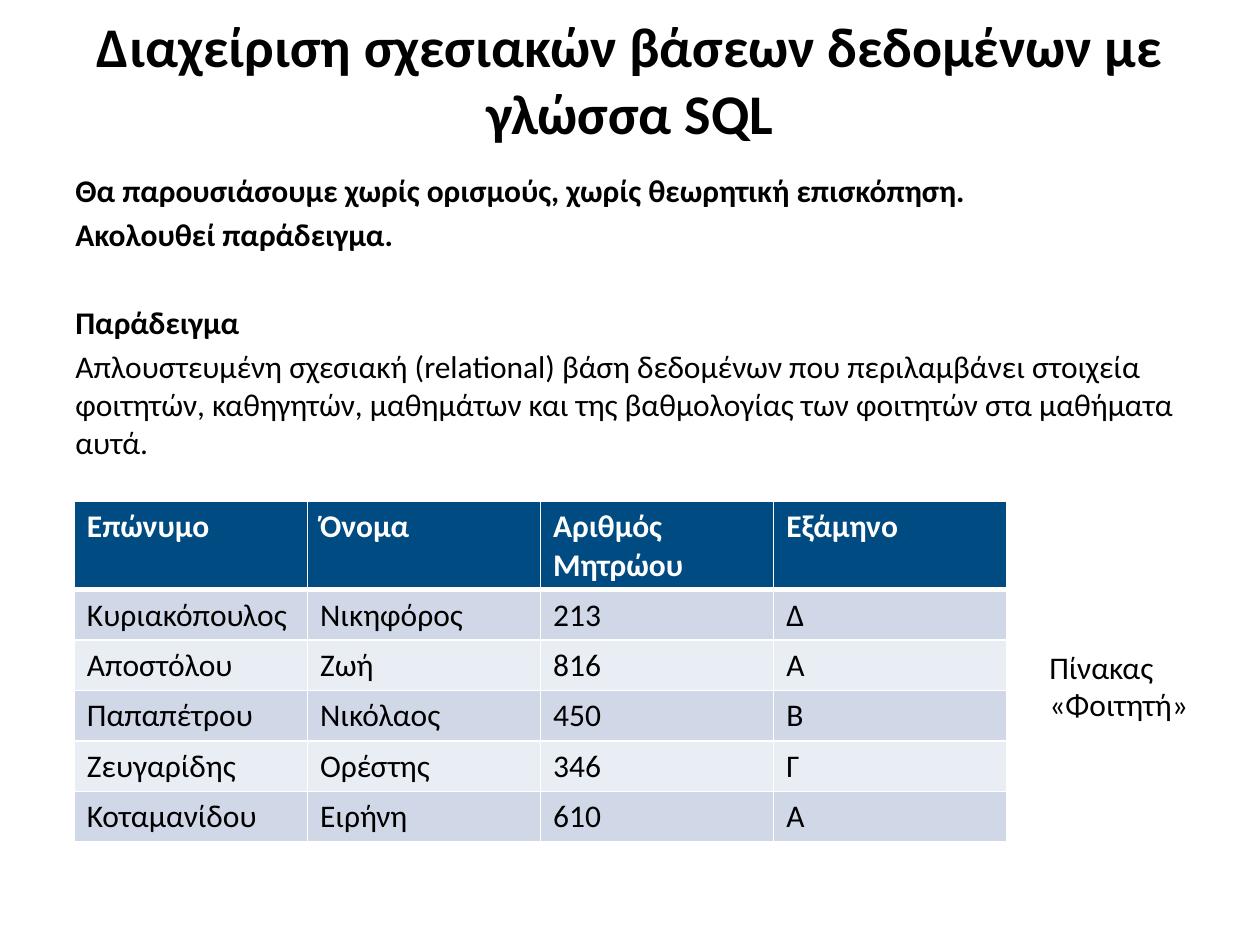
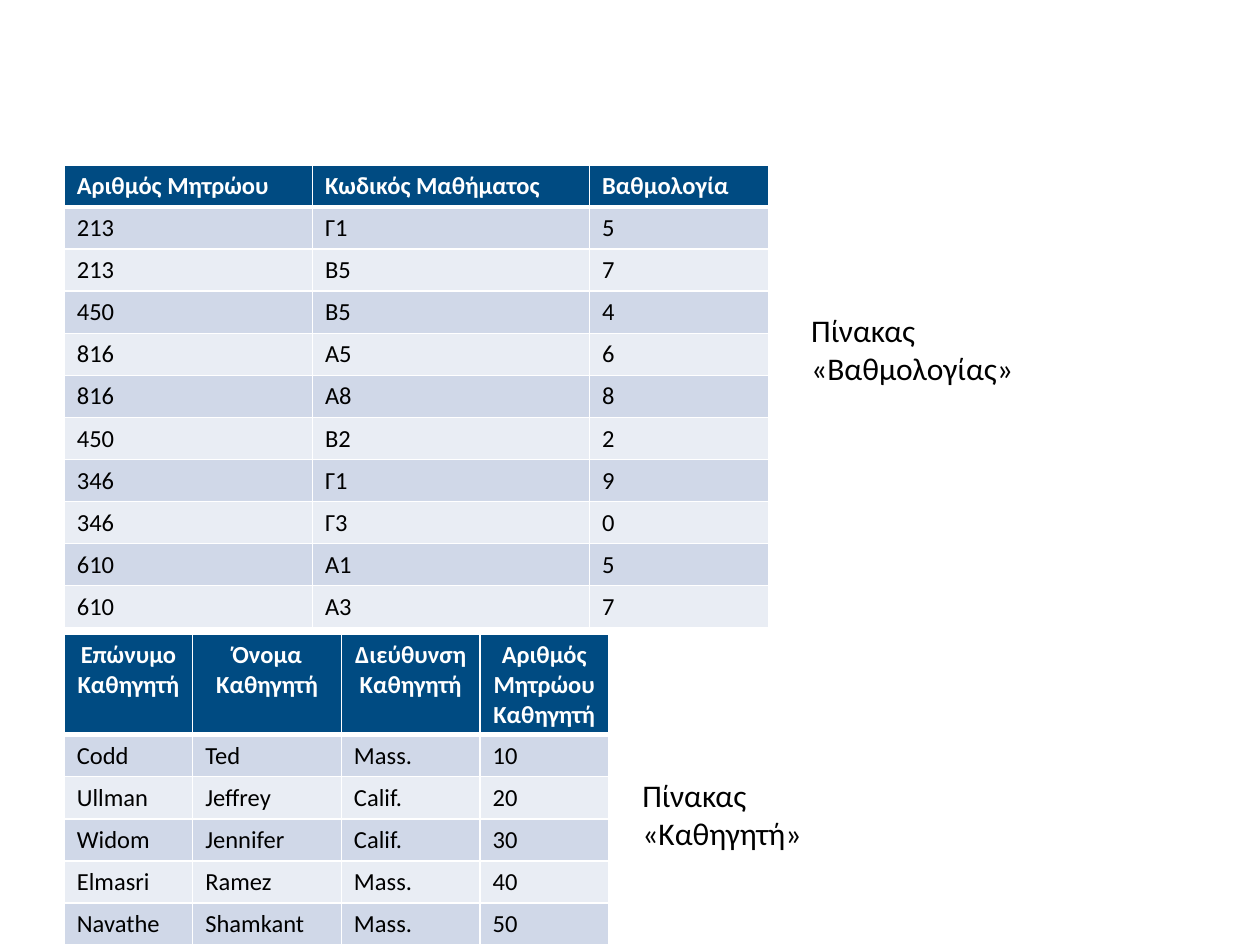
from lxml import etree
from pptx import Presentation
from pptx.dml.color import RGBColor
from pptx.enum.text import MSO_ANCHOR, PP_ALIGN
from pptx.oxml.ns import qn
from pptx.util import Inches, Pt

LEFT, CENTER, JUST = PP_ALIGN.LEFT, PP_ALIGN.CENTER, PP_ALIGN.JUSTIFY
TOP, MIDDLE = MSO_ANCHOR.TOP, MSO_ANCHOR.MIDDLE
FONT = "Calibri"
BLACK = RGBColor(0x00, 0x00, 0x00)
WHITE = RGBColor(0xFF, 0xFF, 0xFF)
NAVY = RGBColor(0x00, 0x4B, 0x82)
BANDS = RGBColor(0xD0, 0xD8, 0xE8), RGBColor(0xE9, 0xED, 0xF4)
GAP = 3.6
BREAK = 28.5

TITLE = "Διαχείριση σχεσιακών βάσεων δεδομένων με γλώσσα SQL"
INTRO = [
    ("Θα παρουσιάσουμε χωρίς ορισμούς, χωρίς θεωρητική επισκόπηση.",
     dict(bold=True, align=JUST)),
    ("Ακολουθεί παράδειγμα.", dict(bold=True, align=JUST, before=GAP)),
    ("Παράδειγμα", dict(bold=True, before=BREAK)),
    ("Απλουστευμένη σχεσιακή (relational) βάση δεδομένων που περιλαμβάνει "
     "στοιχεία φοιτητών, καθηγητών, μαθημάτων και της βαθμολογίας των "
     "φοιτητών στα μαθήματα αυτά.", dict(before=GAP)),
]
STUDENTS = [
    ("Επώνυμο", "Όνομα", "Αριθμός Μητρώου", "Εξάμηνο"),
    ("Κυριακόπουλος", "Νικηφόρος", "213", "Δ"),
    ("Αποστόλου", "Ζωή", "816", "Α"),
    ("Παπαπέτρου", "Νικόλαος", "450", "Β"),
    ("Ζευγαρίδης", "Ορέστης", "346", "Γ"),
    ("Κοταμανίδου", "Ειρήνη", "610", "Α"),
]
GRADES = [
    ("Αριθμός Μητρώου", "Κωδικός Μαθήματος", "Βαθμολογία"),
    ("213", "Γ1", "5"),
    ("213", "Β5", "7"),
    ("450", "Β5", "4"),
    ("816", "Α5", "6"),
    ("816", "Α8", "8"),
    ("450", "Β2", "2"),
    ("346", "Γ1", "9"),
    ("346", "Γ3", "0"),
    ("610", "Α1", "5"),
    ("610", "Α3", "7"),
]
TEACHERS = [
    ("Επώνυμο Καθηγητή", "Όνομα Καθηγητή", "Διεύθυνση Καθηγητή",
     "Αριθμός Μητρώου Καθηγητή"),
    ("Codd", "Ted", "Mass.", "10"),
    ("Ullman", "Jeffrey", "Calif.", "20"),
    ("Widom", "Jennifer", "Calif.", "30"),
    ("Elmasri", "Ramez", "Mass.", "40"),
    ("Navathe", "Shamkant", "Mass.", "50"),
]


def write(par, text, size=18, color=BLACK, bold=False, align=LEFT, before=0):
    """Put formatted text in a paragraph."""
    par.alignment = align
    par.space_before = Pt(before)
    run = par.add_run()
    run.text = text
    font = run.font
    font.name, font.size, font.bold = FONT, Pt(size), bold
    font.color.rgb = color


def add_box(slide, spot, lines, anchor=TOP):
    """Add a wrapped text box holding (text, format) lines."""
    frame = slide.shapes.add_textbox(*map(Inches, spot)).text_frame
    frame.word_wrap = True
    frame.vertical_anchor = anchor
    for i, (text, style) in enumerate(lines):
        par = frame.add_paragraph() if i else frame.paragraphs[0]
        write(par, text, **style)


def add_label(slide, spot, name):
    """Name the table beside it."""
    add_box(slide, spot, [(f"Πίνακας «{name}»", {})])


def add_edges(cell, row):
    """Draw white cell borders, thick below the header."""
    props = cell._tc.get_or_add_tcPr()
    widths = {"L": 1, "R": 1, "T": 3 if row == 1 else 1, "B": 1 if row else 3}
    for side, width in widths.items():
        line = etree.SubElement(props, qn(f"a:ln{side}"), w=str(Pt(width)))
        fill = etree.SubElement(line, qn("a:solidFill"))
        etree.SubElement(fill, qn("a:srgbClr"), val=str(WHITE))


def add_grid(slide, left, top, cols, head, step, rows, size, align=LEFT):
    """Add a banded table with a dark header row."""
    high = head + step * (len(rows) - 1)
    spot = map(Inches, (left, top, sum(cols), high))
    table = slide.shapes.add_table(len(rows), len(cols), *spot).table
    table.horz_banding = False
    for col, width in zip(table.columns, cols):
        col.width = Inches(width)
    for r, texts in enumerate(rows):
        table.rows[r].height = Inches(step if r else head)
        for c, text in enumerate(texts):
            cell = table.cell(r, c)
            add_edges(cell, r)
            cell.fill.solid()
            cell.fill.fore_color.rgb = BANDS[(r - 1) % 2] if r else NAVY
            write(cell.text_frame.paragraphs[0], text, size=size,
                  color=BLACK if r else WHITE, bold=not r,
                  align=LEFT if r else align)


def add_intro(deck):
    """Build the introduction with the student table."""
    slide = deck.slides.add_slide(deck.slide_layouts[6])
    title = dict(size=32, bold=True, align=CENTER)
    add_box(slide, (0.5, 0.13, 9, 0.99), [(TITLE, title)], MIDDLE)
    add_box(slide, (0.5, 1.31, 9, 2.77), INTRO)
    add_label(slide, (8.23, 5.09, 1.42, 0.71), "Φοιτητή")
    add_grid(slide, 0.59, 3.98, [1.85] * 4, 0.69, 0.4, STUDENTS, 18)


def add_marks(deck):
    """Build the grade and teacher tables."""
    slide = deck.slides.add_slide(deck.slide_layouts[6])
    add_label(slide, (6.34, 2.42, 2.13, 0.71), "Βαθμολογίας")
    add_label(slide, (5, 6.11, 1.97, 0.71), "Καθηγητή")
    add_grid(slide, 0.51, 1.31, [1.97, 2.2, 1.42], 0.33, 0.33, GRADES, 14)
    add_grid(slide, 0.51, 5.03, [1.02, 1.18, 1.1, 1.02], 0.8, 0.33,
             TEACHERS, 14, CENTER)


def main():
    """Build and save the deck."""
    deck = Presentation()
    deck.slide_width, deck.slide_height = Inches(10), Inches(7.5)
    add_intro(deck)
    add_marks(deck)
    deck.save("out.pptx")


if __name__ == "__main__":
    main()
